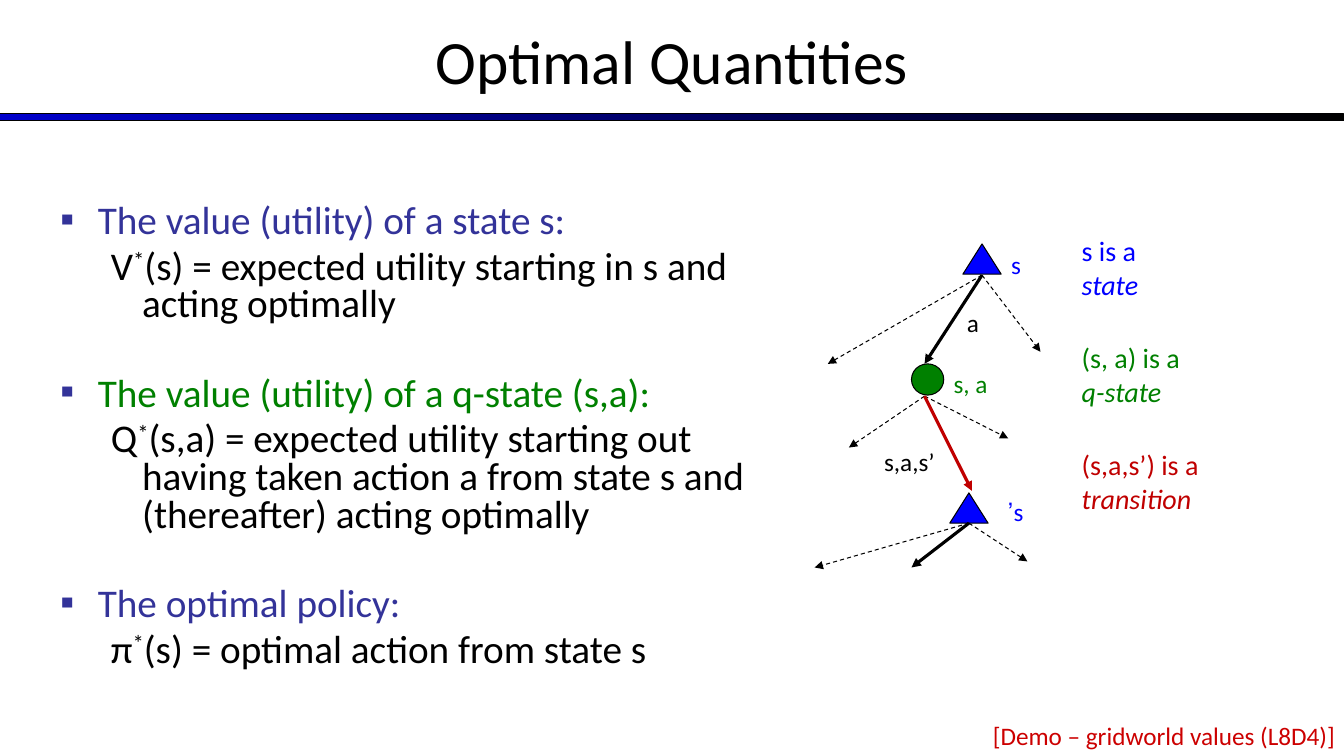
import pptx
import pptx.dml.color
import pptx.enum.dml
import pptx.enum.shapes
import pptx.enum.text
import pptx.oxml.ns
import pptx.util
from lxml import etree

Inches, Pt = pptx.util.Inches, pptx.util.Pt
SHAPE = pptx.enum.shapes.MSO_SHAPE
ALIGN = pptx.enum.text.PP_ALIGN
RGB = pptx.dml.color.RGBColor.from_string
qn = pptx.oxml.ns.qn

COLOR = {
    "black": "000000", "bar": "0000CC", "heading": "333399", "state": "0000FF",
    "q": "008000", "transition": "C00000", "demo": "CC0000",
}


def style(paragraph, size, color):
    paragraph.font.name = "Calibri"
    paragraph.font.size = Pt(size)
    paragraph.font.color.rgb = RGB(COLOR[color])


def add_label(left, top, width, height, text, size, color):
    """Add a wrapped text box and return its only paragraph."""
    frame = slide.shapes.add_textbox(
        Inches(left), Inches(top), Inches(width), Inches(height)).text_frame
    frame.word_wrap = True
    paragraph = frame.paragraphs[0]
    paragraph.text = text
    style(paragraph, size, color)
    return paragraph


deck = pptx.Presentation()
deck.slide_width, deck.slide_height = Inches(13.33), Inches(7.5)
slide = deck.slides.add_slide(deck.slide_layouts[1])

# Title and the bar under it
title = slide.shapes.title
title.left, title.top = Inches(0), Inches(-0.03)
title.width, title.height = Inches(13.33), Inches(1.25)
title.text_frame.text = "Optimal Quantities"
title.text_frame.vertical_anchor = pptx.enum.text.MSO_ANCHOR.MIDDLE
title.text_frame.paragraphs[0].alignment = ALIGN.CENTER
style(title.text_frame.paragraphs[0], 44, "black")

bar = slide.shapes.add_shape(
    SHAPE.RECTANGLE, Inches(0), Inches(1.13), Inches(13.33), Inches(0.07))
bar.shadow.inherit = False
bar.fill.gradient()
bar.fill.gradient_angle = 0
for stop, color in zip(bar.fill.gradient_stops, ("bar", "black")):
    stop.color.rgb = RGB(COLOR[color])
bar.line.color.rgb = RGB(COLOR["black"])
bar.line.width = Pt(0.75)

# Definitions: heading, its colour, symbol, rest of the formula
definitions = [
    ("The value (utility) of a state s:", "heading", "V",
     "(s) = expected utility starting in s and acting optimally"),
    ("The value (utility) of a q-state (s,a):", "q", "Q",
     "(s,a) = expected utility starting out having taken action a from state s "
     "and (thereafter) acting optimally"),
    ("The optimal policy:", "heading", "π", "(s) = optimal action from state s"),
]
body = slide.placeholders[1]
body.left, body.top = Inches(0.5), Inches(1.98)
body.width, body.height = Inches(7.33), Inches(4.86)
body.text_frame.auto_size = pptx.enum.text.MSO_AUTO_SIZE.NONE
for number, (heading_text, heading_color, symbol, meaning) in enumerate(definitions):
    heading = body.text_frame.add_paragraph() if number else body.text_frame.paragraphs[0]
    heading.add_run().text = heading_text
    heading.space_before = Pt(37 if number else 0)
    heading_props = heading._p.get_or_add_pPr()
    heading_props.set("marL", str(Inches(0.37)))
    heading_props.set("indent", str(Inches(-0.37)))
    bullet_color = etree.SubElement(heading_props, qn("a:buClr"))
    etree.SubElement(bullet_color, qn("a:srgbClr"), val=COLOR["heading"])
    etree.SubElement(heading_props, qn("a:buFont"), typeface="Calibri")
    etree.SubElement(heading_props, qn("a:buChar"), char="▪")

    formula = body.text_frame.add_paragraph()
    formula.level = 1
    formula.space_before = Pt(5.6)
    for part in (symbol, "*", meaning):
        run = formula.add_run()
        run.text = part
        if part == "*":
            run._r.get_or_add_rPr().set("baseline", "30000")
    formula_props = formula._p.get_or_add_pPr()
    formula_props.set("marL", str(Inches(0.81)))
    formula_props.set("indent", str(Inches(-0.31)))
    etree.SubElement(formula_props, qn("a:buNone"))

    for paragraph, color in ((heading, heading_color), (formula, "black")):
        paragraph.line_spacing = 0.8
        style(paragraph, 28, color)

# Search tree: nodes
nodes = [
    (SHAPE.ISOSCELES_TRIANGLE, 9.55, 2.42, 0.38, 0.3, "state"),
    (SHAPE.OVAL, 9.04, 3.61, 0.32, 0.31, "q"),
    (SHAPE.ISOSCELES_TRIANGLE, 9.42, 4.89, 0.38, 0.3, "state"),
]
for kind, left, top, width, height, color in nodes:
    node = slide.shapes.add_shape(
        kind, Inches(left), Inches(top), Inches(width), Inches(height))
    node.shadow.inherit = False
    node.fill.solid()
    node.fill.fore_color.rgb = RGB(COLOR[color])
    node.line.color.rgb = RGB(COLOR["black"])
    node.line.width = Pt(0.75)

# Search tree: each fan has a start, its dashed ends, the chosen end and its colour
fans = [
    ((9.74, 2.73), [(8.21, 3.61), (10.32, 3.49)], (9.17, 3.61), "black"),
    ((9.17, 3.93), [(8.42, 4.44), (10, 4.35)], (9.64, 4.87), "transition"),
    ((9.61, 5.19), [(8.08, 5.63), (10.19, 5.57)], (9.04, 5.63), "black"),
]
for start, dashed_ends, chosen_end, chosen_color in fans:
    for end in dashed_ends + [chosen_end]:
        chosen = end == chosen_end
        arrow = slide.shapes.add_connector(
            pptx.enum.shapes.MSO_CONNECTOR.STRAIGHT,
            *(Inches(value) for value in start + end))
        arrow.line.color.rgb = RGB(COLOR[chosen_color if chosen else "black"])
        arrow.line.width = Pt(2.25 if chosen else 0.75)
        if not chosen:
            arrow.line.dash_style = pptx.enum.dml.MSO_LINE.DASH
        etree.SubElement(arrow.line._get_or_add_ln(), qn("a:tailEnd"), type="triangle")
        etree.SubElement(arrow._element.spPr, qn("a:effectLst"))

# Search tree: labels
for left, top, width, text, color in [
    (9.93, 2.42, 0.32, "s", "state"),
    (9.49, 3, 0.32, "a", "black"),
    (9.36, 3.61, 0.64, "s, a", "q"),
    (8.67, 4.38, 0.9, "s,a,s’", "black"),
]:
    add_label(left, top, width, 0.4, text, 18, color)

next_state = add_label(9.83, 4.87, 0.42, 0.4, "s’", 18, "state")
next_state.alignment = ALIGN.RIGHT
next_state._p.get_or_add_pPr().set("rtl", "1")

# Legend
for top, width, phrase, term, color in [
    (2.27, 1.15, "s is a ", "state", "state"),
    (3.33, 1.42, "(s, a) is a ", "q-state", "q"),
    (4.39, 2.37, "(s,a,s’) is a \v", "transition", "transition"),
]:
    legend = add_label(10.63, top, width, 0.77, phrase, 20, color)
    term_run = legend.add_run()
    term_run.text = term
    term_run.font.italic = True

demo = add_label(6.42, 7.1, 6.92, 0.4, "[Demo – gridworld values (L8D4)]", 18, "demo")
demo.alignment = ALIGN.RIGHT

deck.save("out.pptx")
